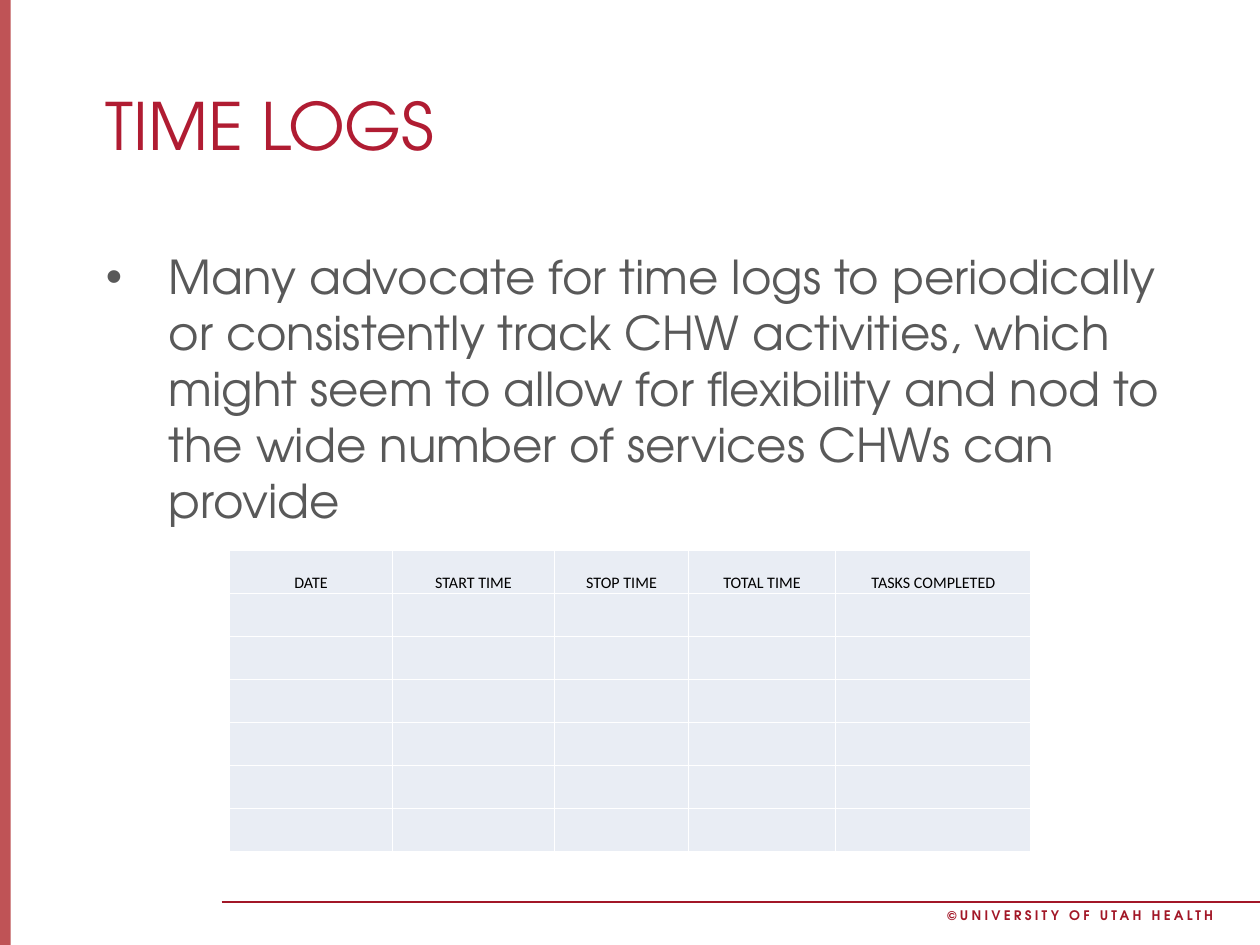
import pptx
import pptx.util
import pptx.dml.color
import pptx.enum.shapes
import pptx.enum.text
import pptx.oxml
import pptx.oxml.ns
from lxml import etree

Cm = pptx.util.Cm
Pt = pptx.util.Pt
RGB = pptx.dml.color.RGBColor
Align = pptx.enum.text.PP_ALIGN
Anchor = pptx.enum.text.MSO_ANCHOR
qn = pptx.oxml.ns.qn

BAR = RGB(0xAF, 0x28, 0x2C)
RULE = RGB(0xA2, 0x17, 0x27)
TITLE = RGB(0xB0, 0x1C, 0x32)
GRAY = RGB(0x59, 0x59, 0x59)
BLACK = RGB(0, 0, 0)
CELL = RGB(0xE9, 0xED, 0xF4)
WHITE = RGB(0xFF, 0xFF, 0xFF)

WIDTH, HEIGHT = 30.48, 22.86


def add(root, tag, **attrs):
    node = etree.SubElement(root, qn(tag))
    for name, value in attrs.items():
        node.set(name, str(value))
    return node


def write(frame, text, size, color, font="TeX Gyre Adventor", bold=False,
          align=Align.LEFT, track=0, indent=0):
    para = frame.paragraphs[0]
    if indent:
        props = para._p.get_or_add_pPr()
        props.set("marL", str(Cm(indent)))
        props.set("indent", str(-Cm(indent)))
        add(props, "a:buFont", typeface="Arial")
        add(props, "a:buChar", char="•")
    para.alignment = align
    run = para.add_run()
    run.text = text
    run.font.size = Pt(size)
    run.font.name = font
    run.font.bold = bold
    run.font.color.rgb = color
    if track:
        run._r.get_or_add_rPr().set("spc", str(round(track * 100)))


class Page:
    def __init__(self, slide):
        self.slide = slide
        self.shapes = slide.shapes

    def bar(self, x, y, w, h, color, alpha):
        shape = self.shapes.add_shape(
            pptx.enum.shapes.MSO_SHAPE.RECTANGLE, Cm(x), Cm(y), Cm(w), Cm(h))
        shape.shadow.inherit = False
        shape.line.fill.background()
        shape.fill.solid()
        shape.fill.fore_color.rgb = color
        tint = shape.fill._xPr.find(".//" + qn("a:srgbClr"))
        add(tint, "a:alpha", val=alpha * 1000)

    def line(self, x, y, end, color, width):
        line = self.shapes.add_connector(
            pptx.enum.shapes.MSO_CONNECTOR.STRAIGHT, Cm(x), Cm(y), Cm(end), Cm(y))
        line.line.color.rgb = color
        line.line.width = Pt(width)
        add(line._element.spPr, "a:effectLst")

    def text(self, x, y, w, h, text, **style):
        frame = self.shapes.add_textbox(Cm(x), Cm(y), Cm(w), Cm(h)).text_frame
        frame.word_wrap = True
        write(frame, text, **style)

    def edge(self, cell):
        props = cell._tc.get_or_add_tcPr()
        for side in ("a:lnL", "a:lnR", "a:lnT", "a:lnB"):
            line = add(props, side, w=Pt(1))
            add(add(line, "a:solidFill"), "a:srgbClr", val=WHITE)

    def table(self, x, y, cols, count, tall, heads):
        grid = self.shapes.add_table(
            count, len(cols), Cm(x), Cm(y), Cm(sum(cols)), Cm(tall * count)).table
        for col, width in zip(grid.columns, cols):
            col.width = Cm(width)
        for row in grid.rows:
            row.height = Cm(tall)
        for cell in grid.iter_cells():
            self.edge(cell)
            cell.fill.solid()
            cell.fill.fore_color.rgb = CELL
            cell.vertical_anchor = Anchor.BOTTOM
            cell.margin_left = cell.margin_right = cell.margin_top = Cm(0.03)
            cell.margin_bottom = 0
        for cell, head in zip(grid.rows[0].cells, heads):
            write(cell.text_frame, head, size=11, color=BLACK,
                  font="Calibri", align=Align.CENTER)


def main():
    deck = pptx.Presentation()
    deck.slide_width = Cm(WIDTH)
    deck.slide_height = Cm(HEIGHT)
    page = Page(deck.slides.add_slide(deck.slide_layouts[6]))

    page.bar(0, 0, 0.26, HEIGHT, BAR, 80)
    page.line(5.36, 21.82, WIDTH, RULE, 1)
    page.text(21.79, 21.82, 7.8, 0.64, "©UNIVERSITY OF UTAH HEALTH", size=9,
              color=RULE, bold=True, align=Align.RIGHT, track=2.2)
    page.text(2.31, 1.93, 26.64, 1.83, "TIME LOGS", size=44.8, color=TITLE)
    page.text(2.31, 5.87, 26.42, 14.86,
              "Many advocate for time logs to periodically or consistently track "
              "CHW activities, which might seem to allow for flexibility and nod "
              "to the wide number of services CHWs can provide",
              size=32, color=GRAY, indent=1.52)
    page.table(5.56, 13.31, (3.93, 3.93, 3.23, 3.57, 4.72), 7, 1.04,
               ("DATE", "START TIME", "STOP TIME", "TOTAL TIME", "TASKS COMPLETED"))
    deck.save("out.pptx")


if __name__ == "__main__":
    main()
